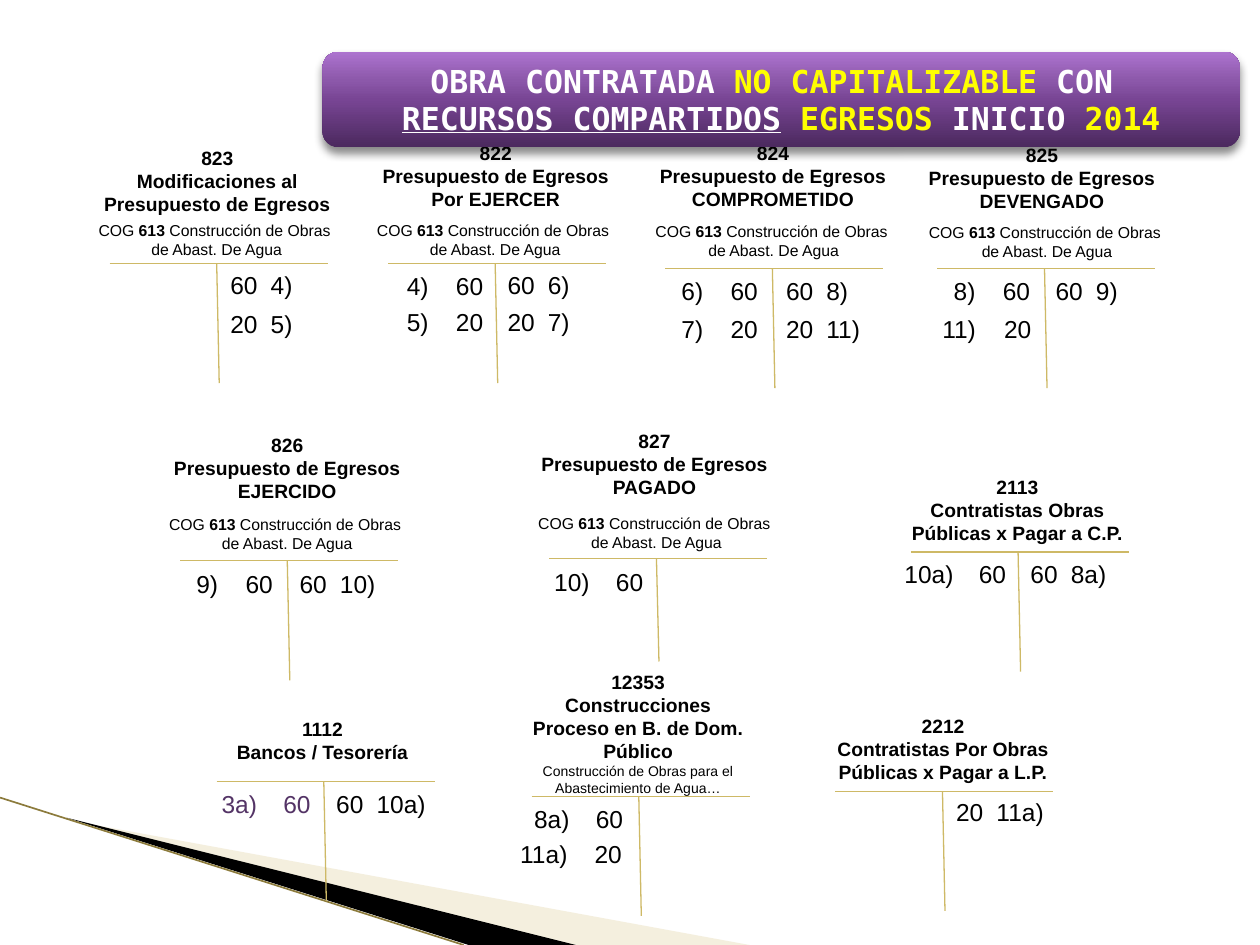
from dataclasses import dataclass
from typing import NamedTuple, Optional

import lxml.etree
import pptx
import pptx.dml.color
import pptx.enum.shapes
import pptx.enum.text
import pptx.oxml.ns
import pptx.util

EMU_PER_PX = 9144  # 100 px to the inch
RULE_WIDTH = 173
STEM_OFFSET, STEM_LEAN = 85, 2
INSET = 10
AMOUNT_WIDTH = 22
CREDIT_TAB = 32
CENTER = pptx.enum.text.PP_ALIGN.CENTER
LEFT = pptx.enum.text.PP_ALIGN.LEFT


@dataclass(frozen=True)
class Theme:
    font: str = "Arial"
    banner_font: str = "DejaVu Sans Mono"
    text: str = "000000"
    opening: str = "543466"
    white: str = "FFFFFF"
    yellow: str = "FFFF00"
    rule: str = "CEB966"
    wedge: str = "E4D7AD"
    edge: str = "8C7B3C"
    banner_stops: tuple = ((0, "4B295E"), (50, "784594"), (70, "8C58AA"), (100, "AD73CF"))
    banner_size: int = 18
    entry_size: int = 14
    title_size: int = 11
    item_size: int = 9
    detail_size: int = 8


THEME = Theme()


class Box(NamedTuple):
    left: int
    top: int
    width: int
    height: int = 66


class Run(NamedTuple):
    text: str
    color: str = THEME.text
    bold: Optional[bool] = None
    underline: Optional[bool] = None


class Entry(NamedTuple):
    """One posting; edge is the side of its box that meets the stem."""
    amount: str
    note: str
    edge: int
    top: int
    color: str = THEME.text


@dataclass(frozen=True)
class Account:
    number: str
    name: str
    title: Box
    rule: tuple[int, int]
    debits: tuple[Entry, ...] = ()
    credits: tuple[Entry, ...] = ()
    item: Optional[tuple[int, int]] = None
    detail: str = ""
    stem_height: int = 95


ACCOUNTS = (
    Account("823", "Modificaciones al Presupuesto de Egresos", Box(70, 111, 205), (87, 209),
            credits=(Entry("60", "4)", 173, 209), Entry("20", "5)", 173, 240)), item=(67, 170)),
    Account("822", "Presupuesto de Egresos Por EJERCER", Box(291, 107, 205), (308, 209),
            (Entry("60", "4)", 394, 210), Entry("20", "5)", 394, 239)),
            (Entry("60", "6)", 393, 209), Entry("20", "7)", 393, 239)), (288, 170)),
    Account("824", "Presupuesto de Egresos COMPROMETIDO", Box(508, 107, 211), (528, 213),
            (Entry("60", "6)", 612, 214), Entry("20", "7)", 612, 244)),
            (Entry("60", "8)", 614, 214), Entry("20", "11)", 614, 244)), (509, 171)),
    Account("825", "Presupuesto de Egresos DEVENGADO", Box(705, 109, 244), (744, 213),
            (Entry("60", "8)", 828, 214), Entry("20", "11)", 829, 244)),
            (Entry("60", "9)", 828, 214),), (726, 172)),
    Account("826", "Presupuesto de Egresos EJERCIDO", Box(111, 339, 234), (143, 445),
            (Entry("60", "9)", 227, 447),), (Entry("60", "10)", 228, 447),), (123, 404)),
    Account("827", "Presupuesto de Egresos PAGADO", Box(418, 336, 203), (436, 443),
            (Entry("60", "10)", 521, 445),), item=(416, 403), stem_height=82),
    Account("2113", "Contratistas Obras Públicas x Pagar a C.P.", Box(709, 372, 197), (723, 438),
            (Entry("60", "10a)", 809, 439),), (Entry("60", "8a)", 808, 439),)),
    Account("1112", "Bancos / Tesorería", Box(131, 564, 250), (172, 620),
            (Entry("60", "3a)", 257, 621, THEME.opening),), (Entry("60", "10a)", 257, 621),)),
    Account("12353", "Construcciones Proceso en B. de Dom. Público", Box(408, 527, 197, 111),
            (422, 632), (Entry("60", "8a)", 505, 633), Entry("20", "11a)", 504, 661)),
            detail="Construcción de Obras para el Abastecimiento de Agua…"),
    Account("2212", "Contratistas Por Obras Públicas x Pagar a L.P.", Box(650, 562, 197),
            (663, 628), credits=(Entry("20", "11a)", 749, 628),)),
)

ITEM_LINES = (
    (Run("COG "), Run("613", bold=True), Run(" Construcción de Obras ")),
    (Run("de Abast. De Agua"),),
)
BANNER_LINES = (
    (Run("OBRA CONTRATADA ", THEME.white), Run("NO CAPITALIZABLE ", THEME.yellow),
     Run("CON ", THEME.white)),
    (Run("RECURSOS COMPARTIDOS", THEME.white, underline=True), Run(" ", THEME.white),
     Run("EGRESOS", THEME.yellow), Run(" INICIO ", THEME.white), Run("2014", THEME.yellow)),
)


def px(value: int) -> pptx.util.Emu:
    return pptx.util.Emu(value * EMU_PER_PX)


def rgb(value: str) -> pptx.dml.color.RGBColor:
    return pptx.dml.color.RGBColor.from_string(value)


def add_child(parent, tag: str, **attributes):
    child = lxml.etree.SubElement(parent, pptx.oxml.ns.qn(tag))
    for name, value in attributes.items():
        child.set(name, str(value))
    return child


def write_paragraph(frame, runs, size: int, bold=False, align=CENTER, font=THEME.font, tab=None):
    paragraph = frame.paragraphs[0]
    if paragraph.runs:
        paragraph = frame.add_paragraph()
    paragraph.alignment = align
    if tab is not None:
        tabs = add_child(paragraph._p.get_or_add_pPr(), "a:tabLst")
        add_child(tabs, "a:tab", pos=px(tab), algn="l")
    paragraph.font.name = font
    paragraph.font.size = pptx.util.Pt(size)
    paragraph.font.bold = bold
    for item in runs:
        run = paragraph.add_run()
        run.text = item.text
        run.font.color.rgb = rgb(item.color)
        run.font.bold = item.bold
        run.font.underline = item.underline


def add_text_frame(shapes, box: Box, wrap: bool = True):
    frame = shapes.add_textbox(*map(px, box)).text_frame
    frame.word_wrap = wrap
    frame.auto_size = pptx.enum.text.MSO_AUTO_SIZE.SHAPE_TO_FIT_TEXT
    return frame


def add_line(shapes, start, end, color: str, width: float):
    line = shapes.add_connector(pptx.enum.shapes.MSO_CONNECTOR.STRAIGHT,
                                *map(px, (*start, *end)))
    line.line.color.rgb = rgb(color)
    line.line.width = pptx.util.Pt(width)
    add_child(line._element.spPr, "a:effectLst")


def add_wedge(shapes, points, color: str, opacity: int = 100):
    builder = shapes.build_freeform(*points[0], scale=EMU_PER_PX)
    builder.add_line_segments(points[1:], close=True)
    shape = builder.convert_to_shape()
    shape.shadow.inherit = False
    shape.line.fill.background()
    shape.fill.solid()
    shape.fill.fore_color.rgb = rgb(color)
    if opacity < 100:
        color_element = shape._element.spPr.find(".//" + pptx.oxml.ns.qn("a:srgbClr"))
        add_child(color_element, "a:alpha", val=opacity * 1000)


def add_entry(shapes, entry: Entry, debit: bool):
    if debit:
        width = 61 + 10 * len(entry.note)
        left, tab = entry.edge - width, width - 2 * INSET - AMOUNT_WIDTH
        text = f"{entry.note}\t{entry.amount}"
    else:
        left, width, tab = entry.edge, 133, CREDIT_TAB
        text = f"{entry.amount}\t{entry.note}"
    frame = add_text_frame(shapes, Box(left, entry.top, width, 34))
    frame.margin_right = 0
    write_paragraph(frame, [Run(text, entry.color)], THEME.entry_size, align=LEFT, tab=tab)


def add_account(shapes, account: Account):
    left, top = account.rule
    stem = left + STEM_OFFSET
    cross = shapes.add_group_shape().shapes
    add_line(cross, (left, top), (left + RULE_WIDTH, top), THEME.rule, 0.75)
    add_line(cross, (stem, top), (stem + STEM_LEAN, top + account.stem_height), THEME.rule, 0.75)
    frame = add_text_frame(shapes, account.title)
    for line in (account.number, account.name):
        write_paragraph(frame, [Run(line)], THEME.title_size, bold=True)
    if account.detail:
        write_paragraph(frame, [Run(account.detail)], THEME.detail_size)
    if account.item:
        frame = add_text_frame(shapes, Box(*account.item, 210, 40), wrap=False)
        for runs in ITEM_LINES:
            write_paragraph(frame, runs, THEME.item_size)
    for entry in account.debits:
        add_entry(shapes, entry, debit=True)
    for entry in account.credits:
        add_entry(shapes, entry, debit=False)


def add_banner(shapes):
    banner = shapes.add_shape(pptx.enum.shapes.MSO_SHAPE.ROUNDED_RECTANGLE,
                              *map(px, Box(256, 41, 728, 76)))
    banner.line.fill.background()
    banner.fill.gradient()
    banner.fill.gradient_angle = 90
    properties = banner._element.spPr
    stops = properties.find(".//" + pptx.oxml.ns.qn("a:gsLst"))
    stops.clear()
    for position, color in THEME.banner_stops:
        add_child(add_child(stops, "a:gs", pos=position * 1000), "a:srgbClr", val=color)
    banner.shadow.inherit = False
    shadow = add_child(properties.find(pptx.oxml.ns.qn("a:effectLst")), "a:outerShdw",
                       blurRad=pptx.util.Pt(5), dist=pptx.util.Pt(3), dir=5400000, rotWithShape=0)
    add_child(add_child(shadow, "a:srgbClr", val=THEME.text), "a:alpha", val=45000)
    frame = banner.text_frame
    frame.word_wrap = True
    frame.vertical_anchor = pptx.enum.text.MSO_ANCHOR.MIDDLE
    for runs in BANNER_LINES:
        write_paragraph(frame, runs, THEME.banner_size, bold=True, font=THEME.banner_font)


def main():
    presentation = pptx.Presentation()
    presentation.slide_width, presentation.slide_height = px(1000), px(750)
    shapes = presentation.slides.add_slide(presentation.slide_layouts[6]).shapes
    add_wedge(shapes, [(55, 651), (595, 750), (456, 750)], THEME.wedge, opacity=40)
    add_wedge(shapes, [(53, 649), (457, 750), (372, 750)], THEME.text)
    add_line(shapes, (0, 633), (368, 750), THEME.edge, 0.95)
    for account in ACCOUNTS:
        add_account(shapes, account)
    add_banner(shapes)
    presentation.save("out.pptx")


if __name__ == "__main__":
    main()
